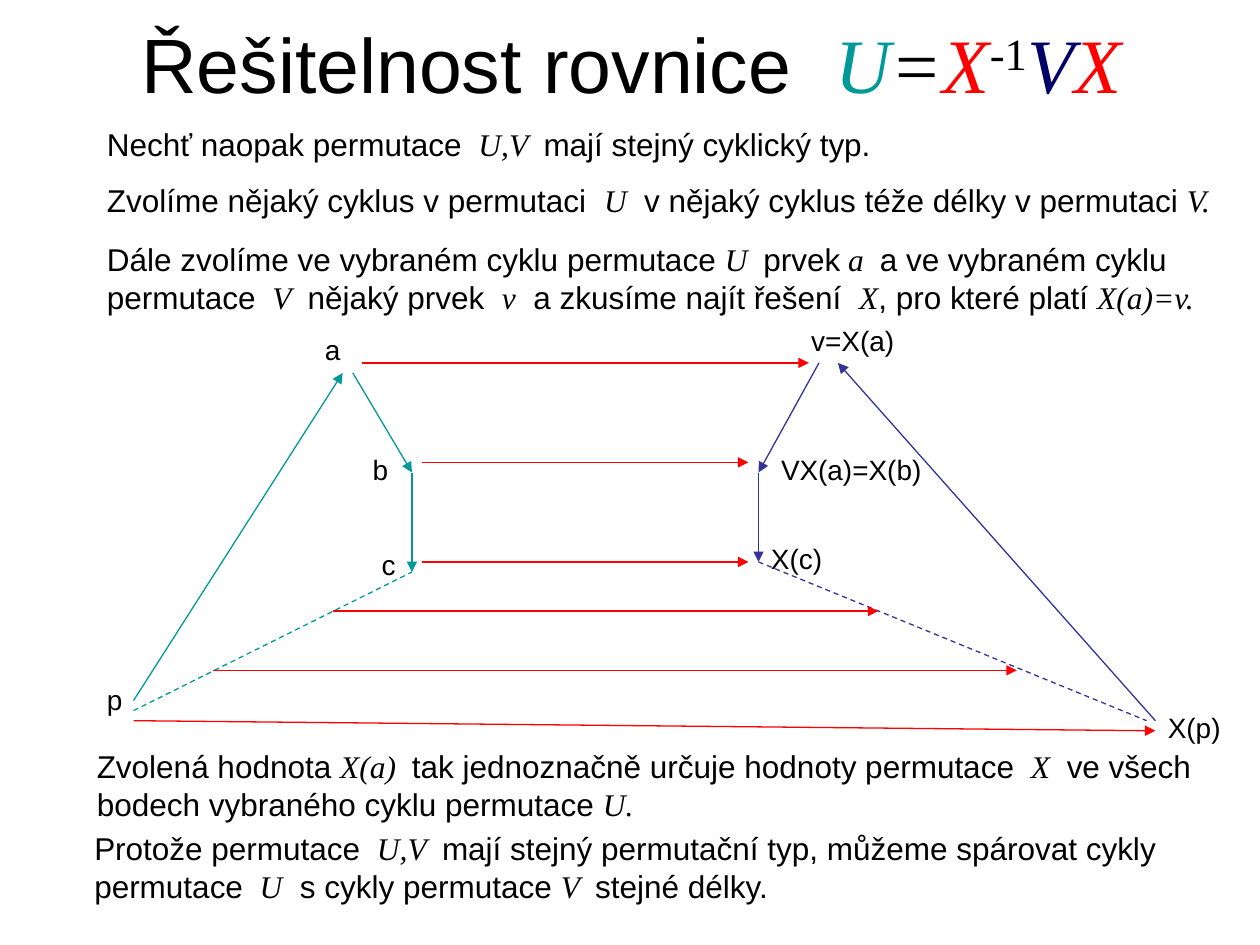
from lxml import etree
from pptx import Presentation
from pptx import util as u
from pptx.dml.color import RGBColor
from pptx.enum import dml, shapes, text
from pptx.oxml.ns import qn

TEAL, RED, NAVY, BLUE, BLACK = "009999", "FF0000", "000066", "333399", "000000"
SANS, SERIF = "Arial", "Times New Roman"

TITLE = [
    ("Řešitelnost rovnice  ", BLACK, SANS, False),
    ("U", TEAL, SERIF, True),
    ("=", BLACK, SERIF, True),
    ("X", RED, SERIF, True),
    ("-1", BLACK, SERIF, False),
    ("V", NAVY, SERIF, True),
    ("X", RED, SERIF, True),
]

NOTES = [
    (0.75, 0.94, 6.34, 0.4, ["Nechť naopak permutace | U,V  |mají stejný cyklický typ."]),
    (0.75, 1.39, 9.1, 0.4,
     ["Zvolíme nějaký cyklus v permutaci  |U|  v nějaký cyklus téže délky v permutaci |V."]),
    (0.75, 1.86, 9, 0.7,
     ["Dále zvolíme ve vybraném cyklu permutace |U  |prvek| a  |a ve vybraném cyklu",
      "permutace | V | nějaký prvek  |v|  a zkusíme najít řešení  |X|, pro které platí |X(a)=v."]),
    (0.67, 5.88, 9, 0.7,
     ["Zvolená hodnota |X(a)  |tak jednoznačně určuje hodnoty permutace | X | ve všech",
      "bodech vybraného cyklu permutace |U."]),
    (0.65, 6.53, 8.8, 0.7,
     ["Protože permutace | U,V  |mají stejný permutační typ, můžeme spárovat cykly",
      "permutace | U|  s cykly permutace |V  |stejné délky."]),
]

LABELS = [
    (2.48, 2.59, 0.32, "a"), (2.86, 3.54, 0.32, "b"),
    (2.93, 4.3, 0.31, "c"), (0.75, 5.37, 0.32, "p"),
    (6.34, 2.52, 0.86, "v=X(a)"), (6.1, 3.54, 1.32, "VX(a)=X(b)"),
    (6.02, 4.25, 0.61, "X(c)"), (9.17, 5.59, 0.62, "X(p)"),
]

CYCLES = [
    (TEAL, [(2.8, 2.96, 3.27, 3.75), (3.27, 3.75, 3.27, 4.54), (1.06, 5.56, 2.72, 2.96)],
     (1.06, 5.64, 3.27, 4.54)),
    (BLUE, [(6.5, 2.88, 6.02, 3.75), (6.02, 3.75, 6.02, 4.46), (9.17, 5.72, 6.65, 2.88)],
     (6.02, 4.46, 9.1, 5.72)),
]

MAPS = [
    (2.87, 2.88, 6.42, 2.88), (3.35, 3.67, 5.94, 3.67), (3.35, 4.46, 5.94, 4.46),
    (2.64, 4.85, 6.97, 4.85), (1.69, 5.32, 8.07, 5.32), (1.06, 5.72, 9.17, 5.8),
]


def color(code):
    """Turn a hex string into a colour."""
    return RGBColor.from_string(code)


def style(font, size, face=SANS, code=BLACK):
    """Set size, face and colour of a font."""
    font.size, font.name = u.Pt(size), face
    font.color.rgb = color(code)


def head(slide):
    """Fill the title with its coloured formula."""
    box = slide.shapes.title
    box.left, box.top, box.width, box.height = map(u.Inches, (0.51, 0, 9, 0.99))
    frame = box.text_frame
    frame.auto_size = text.MSO_AUTO_SIZE.NONE
    frame.vertical_anchor = text.MSO_ANCHOR.MIDDLE
    para = frame.paragraphs[0]
    para.alignment = text.PP_ALIGN.CENTER
    for words, code, face, slant in TITLE:
        run = para.add_run()
        run.text = words
        style(run.font, 44, face, code)
        run.font.italic = slant
        if words == "-1":
            run._r.get_or_add_rPr().set("baseline", "30000")


def write(slide, x, y, w, h, lines, size):
    """Add a text box whose odd parts between bars are italic symbols."""
    box = slide.shapes.add_textbox(*map(u.Inches, (x, y, w, h)))
    frame = box.text_frame
    frame.word_wrap = False
    for row, line in enumerate(lines):
        para = frame.add_paragraph() if row else frame.paragraphs[0]
        style(para.font, size)
        for part, words in enumerate(line.split("|")):
            run = para.add_run()
            run.text = words
            if part % 2:
                run.font.name, run.font.italic = SERIF, True


def link(slide, ends, code, dash=False):
    """Draw an arrow, or a dashed line without a head."""
    line = slide.shapes.add_connector(shapes.MSO_CONNECTOR.STRAIGHT, *map(u.Inches, ends))
    line.line.width = u.Pt(0.75)
    line.line.color.rgb = color(code)
    props = line._element.spPr
    if dash:
        line.line.dash_style = dml.MSO_LINE.DASH
    else:
        etree.SubElement(props.find(qn("a:ln")), qn("a:tailEnd"), type="triangle")
    etree.SubElement(props, qn("a:effectLst"))


def main():
    """Build and save the slide."""
    deck = Presentation()
    deck.slide_width, deck.slide_height = u.Inches(10), u.Inches(7.5)
    slide = deck.slides.add_slide(deck.slide_layouts[5])
    head(slide)
    for x, y, w, h, lines in NOTES:
        write(slide, x, y, w, h, lines, 18)
    for x, y, w, name in LABELS:
        write(slide, x, y, w, 0.37, [name], 16)
    for code, steps, rest in CYCLES:
        for ends in steps:
            link(slide, ends, code)
        link(slide, rest, code, dash=True)
    for ends in MAPS:
        link(slide, ends, RED)
    deck.save("out.pptx")


if __name__ == "__main__":
    main()
